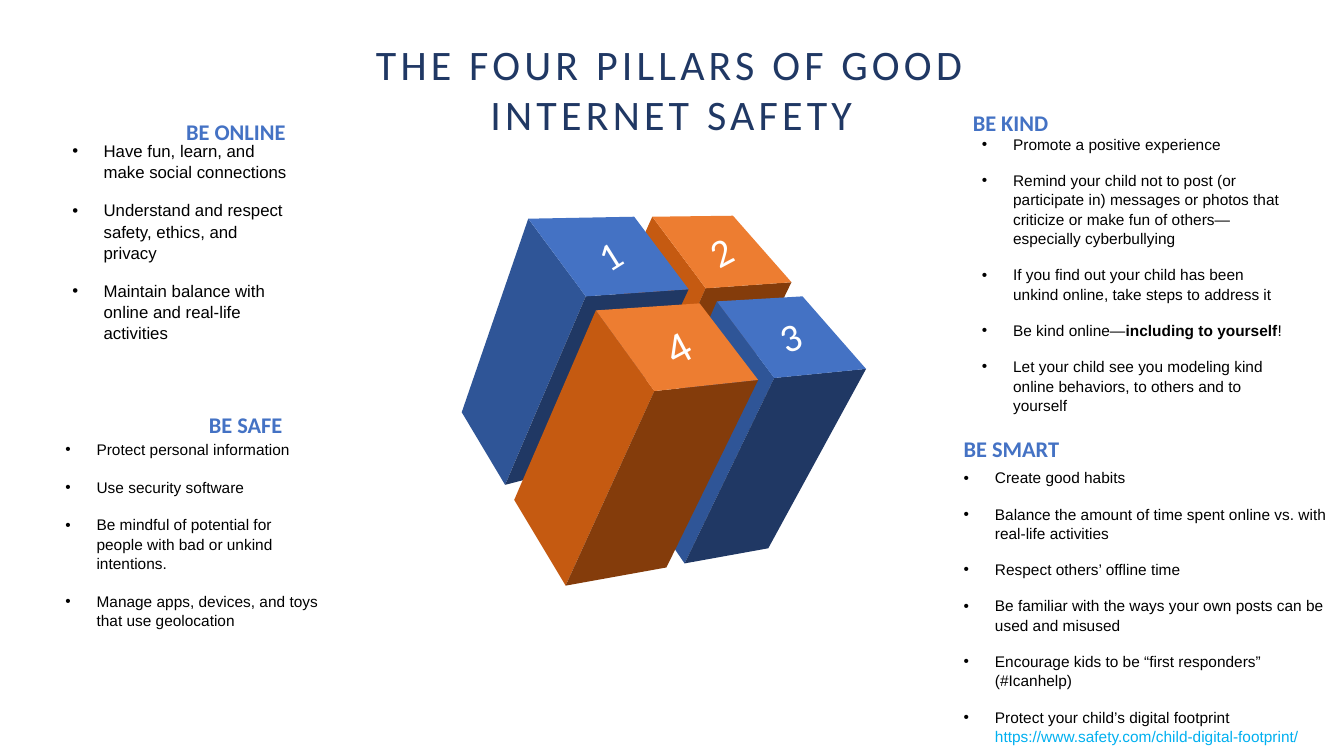
from lxml.etree import SubElement
from pptx import Presentation
from pptx.dml.color import RGBColor
from pptx.enum.text import MSO_ANCHOR, MSO_AUTO_SIZE, PP_ALIGN
from pptx.oxml.ns import qn
from pptx.util import Inches, Pt

BLUES = ("4472C4", "2F5597", "203864")
ORANGES = ("ED7D31", "C55A11", "843C0B")
HEADING = {"name": "Calibri", "size": Pt(16), "bold": True}

PILLARS = [
    ("2", 28, -28, ORANGES, [(1.89, 0.01), (2.69, 0), (3.27, 0.66), (2.42, 0.72),
                             (1.48, 0.93), (2, 1.66), (2.82, 1.59)]),
    ("3", 28, -22, BLUES, [(2.53, 0.85), (3.38, 0.8), (4.01, 1.52), (3.1, 1.61),
                           (1.72, 2.73), (2.21, 3.45), (3.04, 3.3)]),
    ("1", 28, -32, BLUES, [(0.66, 0.03), (1.71, 0.01), (2.25, 0.73), (1.23, 0.8),
                           (0, 1.95), (0.43, 2.67), (1.47, 2.4)]),
    ("4", 32, -28, ORANGES, [(1.33, 0.94), (2.36, 0.87), (2.94, 1.63), (1.91, 1.74),
                             (0.52, 2.82), (1.03, 3.67), (2.03, 3.49)]),
]

SECTIONS = [
    ("BE ONLINE", (0.59, 0.99), PP_ALIGN.RIGHT, (0.62, 1.34, 2.34, 2.05), 12, 12, [
        "Have fun, learn, and make social connections",
        "Understand and respect safety, ethics, and privacy",
        "Maintain balance with online and real-life activities"]),
    ("BE SAFE", (0.56, 3.9), PP_ALIGN.RIGHT, (0.55, 4.31, 2.73, 1.95), 11, 13, [
        "Protect personal information",
        "Use security software",
        "Be mindful of potential for people with bad or unkind intentions.",
        "Manage apps, devices, and toys that use geolocation"]),
    ("BE KIND", (9.55, 0.9), PP_ALIGN.LEFT, (9.64, 1.28, 3.27, 2.81), 11, 12, [
        "Promote a positive experience",
        "Remind your child not to post (or participate in) messages or photos that "
        "criticize or make fun of others—especially cyberbullying",
        "If you find out your child has been unkind online, take steps to address it",
        [("Be kind online—", {}), ("including to yourself", {"bold": True}), ("!", {})],
        "Let your child see you modeling kind online behaviors, to others and to yourself"]),
    ("BE SMART", (9.46, 4.13), PP_ALIGN.LEFT, (9.46, 4.59, 3.85, 2.79), 11, 12, [
        "Create good habits",
        "Balance the amount of time spent online vs. with real-life activities",
        "Respect others’ offline time",
        "Be familiar with the ways your own posts can be used and misused",
        "Encourage kids to be “first responders” (#Icanhelp)",
        [("Protect your child’s digital footprint ", {}),
         ("https://www.safety.com/child-digital-footprint/", {"color": "00B0F0"})]]),
]


def rgb(value):
    """Turn a hex string into a colour."""
    return RGBColor.from_string(value)


def add_run(p, text, fmt, color):
    """Add a run with the given font attributes and colour."""
    r = p.add_run()
    r.text = text
    for name, value in fmt.items():
        setattr(r.font, name, value)
    r.font.color.rgb = rgb(color)
    return r


def add_text_box(s, box):
    """Add a wrapping text box and return it."""
    sp = s.shapes.add_textbox(*map(Inches, box))
    sp.text_frame.word_wrap = True
    return sp


def add_bullet(p):
    """Give a paragraph a round bullet with a hanging indent."""
    pPr = p._p.get_or_add_pPr()
    pPr.set("marL", str(Inches(0.31)))
    pPr.set("indent", str(Inches(-0.31)))
    SubElement(pPr, qn("a:buFont")).set("typeface", "Arial")
    SubElement(pPr, qn("a:buChar")).set("char", "•")


def add_title(s, box, text):
    """Place and format the title placeholder."""
    sp = s.shapes.title
    sp.left, sp.top, sp.width, sp.height = map(Inches, box)
    tf = sp.text_frame
    tf.auto_size = MSO_AUTO_SIZE.NONE
    tf.word_wrap = True
    tf.vertical_anchor = MSO_ANCHOR.TOP
    p = tf.paragraphs[0]
    p.alignment = PP_ALIGN.CENTER
    r = add_run(p, text, {"name": "Calibri", "size": Pt(30)}, "203864")
    r._r.get_or_add_rPr().set("spc", "300")


def add_face(s, points, color):
    """Draw one filled face through points given in inches."""
    corners = [(Inches(x), Inches(y)) for x, y in points]
    builder = s.shapes.build_freeform(*corners[0])
    builder.add_line_segments(corners[1:], close=True)
    sp = builder.convert_to_shape()
    sp.shadow.inherit = False
    sp.fill.solid()
    sp.fill.fore_color.rgb = rgb(color)
    sp.line.fill.background()


def add_pillars(s, left, top):
    """Draw the four numbered pillars from back to front."""
    for number, size, angle, (light, mid, dark), points in PILLARS:
        back, right, front, near, foot_left, foot_near, foot_right = [
            (left + x, top + y) for x, y in points]
        lid = (back, right, front, near)
        add_face(s, (back, near, foot_near, foot_left), mid)
        add_face(s, (near, front, foot_right, foot_near), dark)
        add_face(s, lid, light)
        points[:] = points[:4]
    for number, size, angle, colors, lid in PILLARS:
        x, y = (sum(axis) / 4 for axis in zip(*lid))
        sp = add_text_box(s, (left + x - 0.25, top + y - 0.3, 0.5, 0.6))
        sp.rotation = angle
        tf = sp.text_frame
        tf.vertical_anchor = MSO_ANCHOR.MIDDLE
        p = tf.paragraphs[0]
        p.alignment = PP_ALIGN.CENTER
        add_run(p, number, {"name": "Calibri", "size": Pt(size)}, "FFFFFF")


def add_section(s, heading, corner, align, box, size, gap, items):
    """Add a heading and its bulleted list."""
    p = add_text_box(s, (*corner, 2.34, 0.46)).text_frame.paragraphs[0]
    p.alignment = align
    p.line_spacing = 1.5
    add_run(p, heading, HEADING, "4472C4")
    tf = add_text_box(s, box).text_frame
    for i, item in enumerate(items):
        p = tf.add_paragraph() if i else tf.paragraphs[0]
        p.line_spacing = 1.05
        if i:
            p.space_before = Pt(gap)
        add_bullet(p)
        for text, extra in [(item, {})] if isinstance(item, str) else item:
            fmt = {"name": "Arial", "size": Pt(size), "bold": extra.get("bold", False)}
            add_run(p, text, fmt, extra.get("color", "000000"))


def main():
    """Build the slide and save it."""
    prs = Presentation()
    prs.slide_width, prs.slide_height = Inches(13.33), Inches(7.5)
    s = prs.slides.add_slide(prs.slide_layouts[5])
    add_title(s, (2.69, 0.33, 7.94, 1.11), "THE FOUR PILLARS OF GOOD INTERNET SAFETY")
    add_pillars(s, 4.58, 2.14)
    for section in SECTIONS:
        add_section(s, *section)
    prs.save("out.pptx")


if __name__ == "__main__":
    main()
